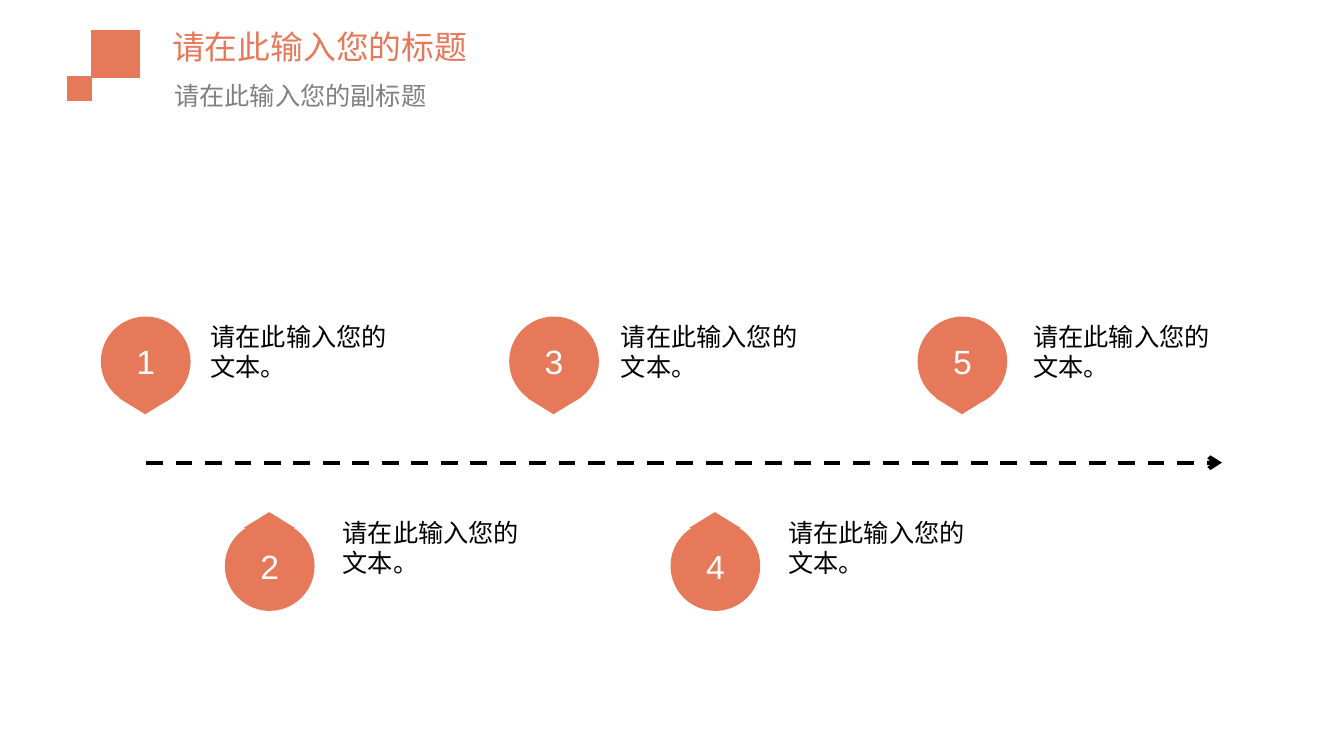
from lxml import etree
from pptx import Presentation, util as u
from pptx.dml.color import RGBColor
from pptx.enum import dml, shapes, text
from pptx.oxml.ns import qn

PX = 9144
CORAL, BLACK, WHITE, GREY = "E6795A", "000000", "FFFFFF", "808080"
KIND = shapes.MSO_SHAPE
MID = {"vertical_anchor": text.MSO_ANCHOR.MIDDLE}
CENTRE = {"alignment": text.PP_ALIGN.CENTER}
INSET = {"margin_left": 10 * PX, "margin_right": 10 * PX,
         "margin_top": 5 * PX, "margin_bottom": 5 * PX}


def scale(*sizes):
    return [size * PX for size in sizes]


def paint(spot, hue):
    spot.rgb = RGBColor.from_string(hue)


def apply(item, values):
    for name, value in values.items():
        setattr(item, name, value)


def write(frame, words, size, hue, body={}, para={}):
    apply(frame, {"word_wrap": True, **INSET, **body})
    line = frame.paragraphs[0]
    apply(line, para)
    run = line.add_run()
    run.text = words
    apply(run.font, {"name": "Arial", "size": u.Pt(size)})
    paint(run.font.color, hue)


def label(slide, box, *args):
    write(slide.shapes.add_textbox(*scale(*box)).text_frame, *args)


def block(group, kind, box, edge=False):
    shape = group.shapes.add_shape(kind, *scale(*box))
    shape.shadow.inherit = False
    shape.fill.solid()
    paint(shape.fill.fore_color, CORAL)
    if edge:
        paint(shape.line.color, CORAL)
        shape.line.width = u.Pt(0.75)
    else:
        shape.line.fill.background()
    return shape


def header(slide, x, y):
    badge = slide.shapes.add_group_shape()
    block(badge, KIND.RECTANGLE, (x + 24, y + 16, 47, 47), True)
    block(badge, KIND.RECTANGLE, (x, y + 62, 24, 24), True)
    label(slide, (x + 94, y, 956, 64), "请在此输入您的标题", 23.4, CORAL, MID)
    label(slide, (x + 96, y + 64, 954, 54), "请在此输入您的副标题", 18, GREY,
          {}, {"line_spacing": 0.9})


def axis(slide, x, y, width):
    line = slide.shapes.add_connector(
        shapes.MSO_CONNECTOR.STRAIGHT, *scale(x, y, x + width, y))
    paint(line.line.color, BLACK)
    apply(line.line, {"width": u.Pt(3), "dash_style": dml.MSO_LINE.DASH})
    props = line.element.spPr
    etree.SubElement(props.find(qn("a:ln")), qn("a:tailEnd"), type="arrow")
    etree.SubElement(props, qn("a:effectLst"))


def step(slide, x, y, num, gap, below):
    disc, wide, high = 89, 52, 16
    drop = 9 if below else 0
    pin = slide.shapes.add_group_shape()
    ball = block(pin, KIND.OVAL, (x, y + drop, disc, disc))
    write(ball.text_frame, str(num), 24, WHITE, MID, CENTRE)
    left = x + (disc - wide) // 2
    top = y if below else y + 81
    tip = block(pin, KIND.FLOWCHART_MERGE, (left, top, wide, high))
    tip.rotation = 180 if below else 0
    label(slide, (x + gap, y, 218, disc), "请在此输入您的文本。", 18, BLACK)


def steps(slide, x, y):
    axis(slide, x + 45, y + 145, 1067)
    for i, gap in enumerate((99, 101, 105)):
        step(slide, x + 405 * i, y, 2 * i + 1, gap, False)
    for i in range(2):
        step(slide, x + 123 + 442 * i, y + 194, 2 * i + 2, 107, True)


def main():
    deck = Presentation()
    apply(deck, {"slide_width": 1333 * PX, "slide_height": 750 * PX})
    slide = deck.slides.add_slide(deck.slide_layouts[6])
    header(slide, 67, 14)
    steps(slide, 100, 314)
    deck.save("out.pptx")


if __name__ == "__main__":
    main()
